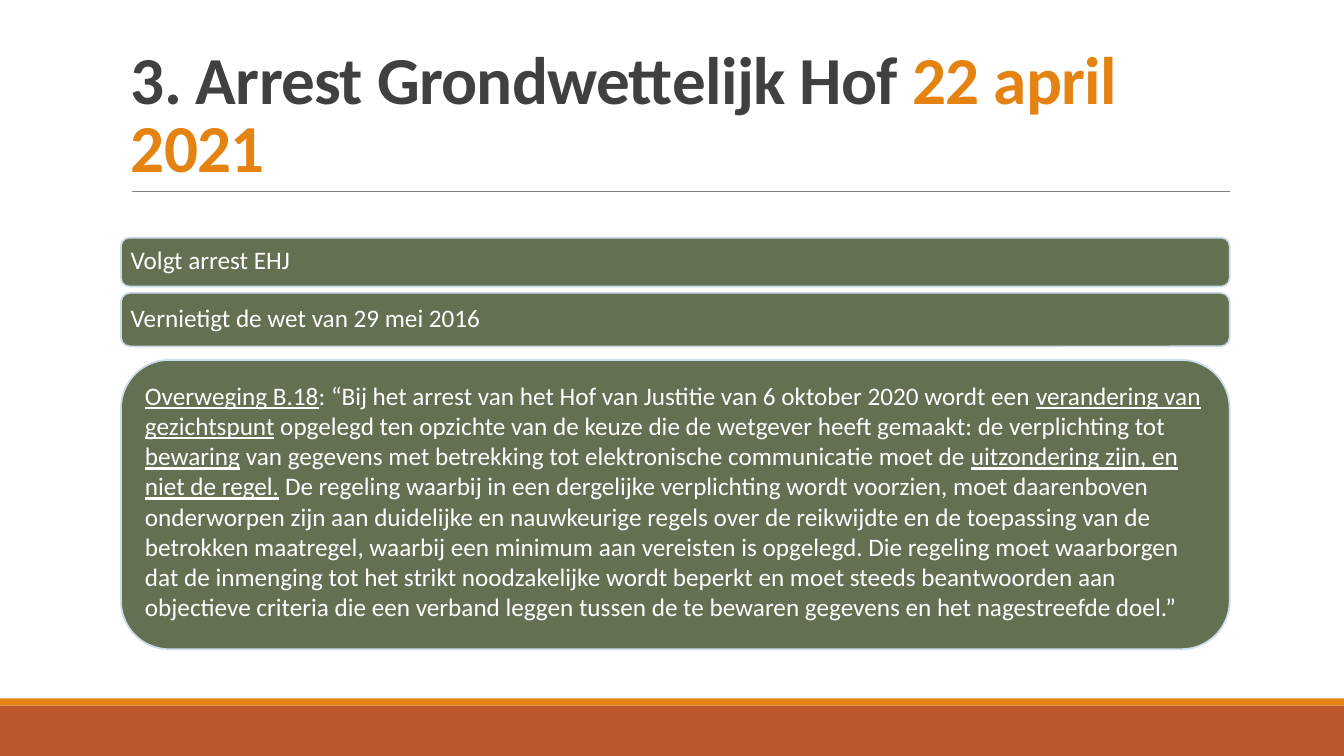
from pptx import Presentation
from pptx.dml.color import RGBColor
from pptx.enum.shapes import MSO_CONNECTOR, MSO_SHAPE as Shape
from pptx.enum.text import MSO_ANCHOR as Anchor, PP_ALIGN as Align
from pptx.oxml.ns import qn
from pptx.util import Cm, Pt
from lxml.etree import SubElement

COLORS = {
    "dark": "404040", "orange": "E48312", "rust": "BD582C", "rule": "808080",
    "green": "637052", "outline": "CCDDEA", "white": "FFFFFF",
}
FONT = "Calibri"
SLIDE_W, SLIDE_H = 33.87, 19.05
LEFT, WIDTH = 3.05, 27.94

# (text, colour)
TITLE = [("3. Arrest Grondwettelijk Hof ", "dark"), ("22 april 2021", "orange")]

# (text, underlined)
QUOTE = [
    ("Overweging B.18", True),
    (": “Bij het arrest van het Hof van Justitie van 6 oktober 2020 wordt een ", False),
    ("verandering van gezichtspunt", True),
    (" opgelegd ten opzichte van de keuze die de wetgever heeft gemaakt: "
     "de verplichting tot ", False),
    ("bewaring", True),
    (" van gegevens met betrekking tot elektronische communicatie moet de ", False),
    ("uitzondering zijn, en niet de regel.", True),
    (" De regeling waarbij in een dergelijke verplichting wordt voorzien, moet "
     "daarenboven onderworpen zijn aan duidelijke en nauwkeurige regels over de "
     "reikwijdte en de toepassing van de betrokken maatregel, waarbij een minimum "
     "aan vereisten is opgelegd. Die regeling moet waarborgen dat de inmenging tot "
     "het strikt noodzakelijke wordt beperkt en moet steeds beantwoorden aan "
     "objectieve criteria die een verband leggen tussen de te bewaren gegevens en "
     "het nagestreefde doel.”", False),
]

# (top, height, side inset, bottom inset, line spacing, runs)
BOXES = [
    (5.99, 1.23, 0.18, 0.18, 0.9, [("Volgt arrest EHJ", False)]),
    (7.38, 1.35, 0.18, 0.18, 0.9, [("Vernietigt de wet van 29 mei 2016", False)]),
    (9.07, 7.29, 0.25, 0.33, 1.0, QUOTE),
]

# (top, height, colour)
FOOTER_BANDS = [(17.78, 1.27, "rust"), (17.6, 0.18, "orange")]


def rgb(name):
    return RGBColor.from_string(COLORS[name])


def add_filled(slide, kind, left, top, width, height, color):
    sp = slide.shapes.add_shape(kind, Cm(left), Cm(top), Cm(width), Cm(height))
    sp.shadow.inherit = False
    sp.fill.solid()
    sp.fill.fore_color.rgb = rgb(color)
    sp.line.fill.background()
    return sp


def add_title(slide):
    tf = slide.shapes.add_textbox(Cm(LEFT), Cm(0.79), Cm(WIDTH), Cm(4.04)).text_frame
    tf.word_wrap = True
    tf.vertical_anchor = Anchor.BOTTOM
    p = tf.paragraphs[0]
    p.line_spacing = 0.85
    p.font.name, p.font.size, p.font.bold = FONT, Pt(48), True
    for text, color in TITLE:
        r = p.add_run()
        r.text = text
        r.font.color.rgb = rgb(color)
        r.font._element.set("spc", "-50")


def add_rule(slide):
    line = slide.shapes.add_connector(
        MSO_CONNECTOR.STRAIGHT, Cm(3.33), Cm(4.83), Cm(31), Cm(4.83))
    line.line.color.rgb = rgb("rule")
    line.line.width = Pt(0.5)
    SubElement(line._element.spPr, qn("a:effectLst"))


def add_box(slide, top, height, side, bottom, spacing, runs):
    sp = add_filled(slide, Shape.ROUNDED_RECTANGLE, LEFT, top, WIDTH, height, "green")
    sp.line.color.rgb = rgb("outline")
    sp.line.width = Pt(1.25)
    tf = sp.text_frame
    tf.word_wrap = True
    tf.vertical_anchor = Anchor.MIDDLE
    tf.margin_left = tf.margin_right = Cm(side)
    tf.margin_top, tf.margin_bottom = Cm(0.15), Cm(bottom)
    p = tf.paragraphs[0]
    p.alignment = Align.LEFT
    p.line_spacing = spacing
    p.font.name, p.font.size = FONT, Pt(18)
    p.font.color.rgb = rgb("white")
    for text, underlined in runs:
        r = p.add_run()
        r.text = text
        r.font.underline = underlined


def main():
    prs = Presentation()
    prs.slide_width, prs.slide_height = Cm(SLIDE_W), Cm(SLIDE_H)
    slide = prs.slides.add_slide(prs.slide_layouts[6])
    for top, height, color in FOOTER_BANDS:
        add_filled(slide, Shape.RECTANGLE, 0, top, SLIDE_W, height, color)
    add_rule(slide)
    add_title(slide)
    for box in BOXES:
        add_box(slide, *box)
    prs.save("out.pptx")


if __name__ == "__main__":
    main()
